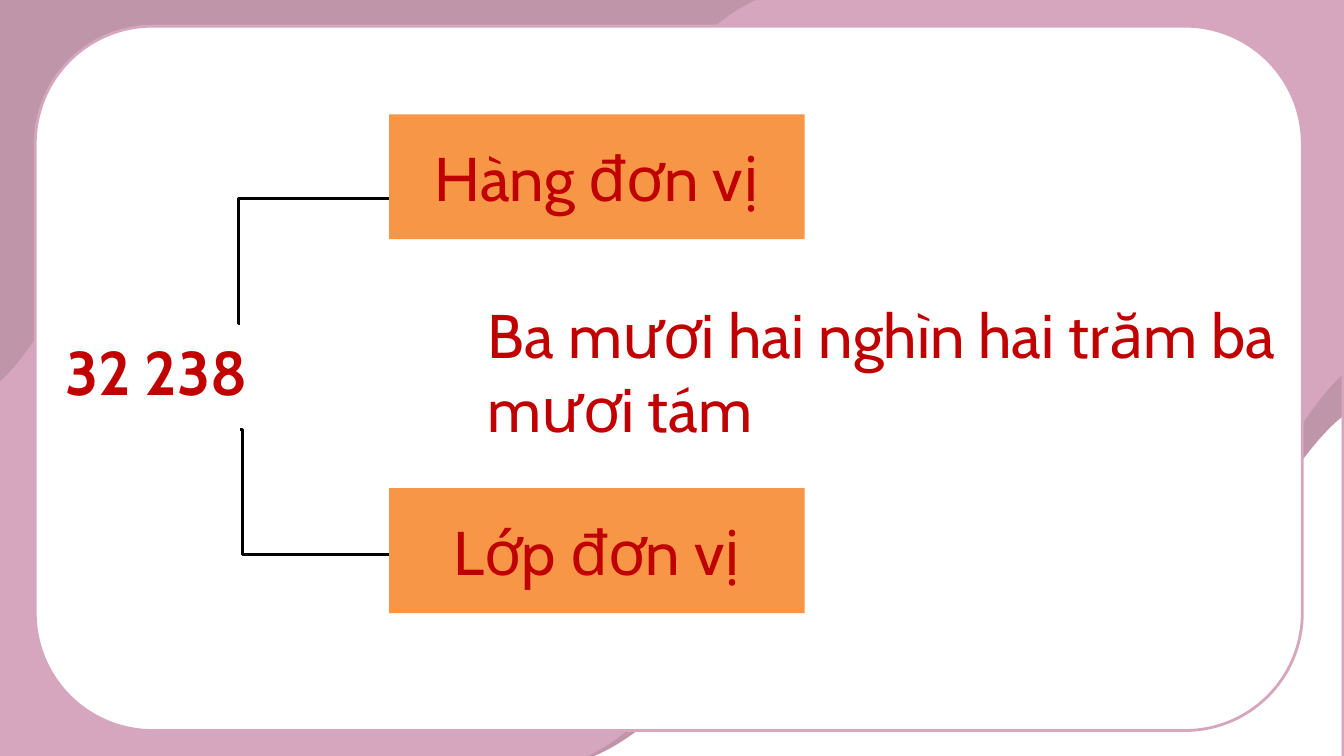
from lxml.etree import SubElement
from pptx import Presentation
from pptx.dml.color import RGBColor
from pptx.enum.shapes import MSO_CONNECTOR, MSO_SHAPE
from pptx.enum.text import MSO_ANCHOR, PP_ALIGN
from pptx.oxml.ns import qn
from pptx.util import Cm, Pt

INK = {"pink": "D5A6BD", "white": "FFFFFF", "black": "000000",
       "red": "C00000", "orange": "F79646"}


def paint(fill, name):
    fill.solid()
    fill.fore_color.rgb = RGBColor.from_string(INK[name])


def write(shape, text, align, bold=False):
    frame = shape.text_frame
    frame.word_wrap = True
    frame.vertical_anchor = MSO_ANCHOR.MIDDLE
    frame.margin_left = frame.margin_right = Cm(0.33)
    frame.margin_top = frame.margin_bottom = Cm(0.33)
    para = frame.paragraphs[0]
    para.alignment = align
    run = para.add_run()
    run.text = text
    run.font.name = "Cabin"
    run.font.size = Pt(44)
    run.font.bold = bold
    run.font.color.rgb = RGBColor.from_string(INK["red"])


deck = Presentation()
deck.slide_width = Cm(33.87)
deck.slide_height = Cm(19.05)
slide = deck.slides.add_slide(deck.slide_layouts[6])
shapes = slide.shapes
paint(slide.background.fill, "pink")

outer = [(33.81, 9.47), (32.18, 10.97), (30.99, 14.96), (28.88, 13.94),
         (26.77, 12.93), (26.04, 11.46), (23.83, 14.5),
         (21.62, 17.58), (20.9, 14.33), (19.41, 15.09),
         (17.88, 15.82), (16.59, 18.26), (14.76, 19.08)]
inner = [(33.81, 10.52), (32.18, 11.84), (31.01, 15.42), (28.93, 14.5),
         (26.85, 13.59), (26.09, 12.29), (23.9, 15.01),
         (21.72, 17.73), (21.03, 14.83), (19.53, 15.52),
         (18.03, 16.18), (16.74, 18.36), (14.91, 19.08)]
corner = (33.81, 19.08)

for knots, color, alpha, turn in [(outer, "black", 10, 0),
                                  (inner, "white", 100, 0),
                                  (outer, "black", 10, 180)]:
    dots = [(Cm(x), Cm(y)) for x, y in [*knots, corner]]
    pen = shapes.build_freeform(*dots[0])
    pen.add_line_segments(dots[1:], close=True)
    wave = pen.convert_to_shape()
    lines = list(wave._element.iter(qn("a:lnTo")))
    for k in range(0, len(knots) - 1, 3):
        curve = lines[k].makeelement(qn("a:cubicBezTo"))
        lines[k].addprevious(curve)
        for line in lines[k:k + 3]:
            curve.append(line[0])
            line.getparent().remove(line)
    if turn:
        wave.left = wave.top = Cm(0)
        wave.rotation = turn
    wave.shadow.inherit = False
    paint(wave.fill, color)
    wave.line.fill.background()
    if alpha < 100:
        tint = wave.fill._xPr.find(qn("a:solidFill"))[0]
        SubElement(tint, qn("a:alpha"), val=str(alpha * 1000))

panel = shapes.add_shape(MSO_SHAPE.ROUNDED_RECTANGLE,
                         Cm(0.89), Cm(0.66), Cm(31.93), Cm(17.75))
panel.shadow.inherit = False
paint(panel.fill, "white")
paint(panel.line.fill, "pink")
panel.line.width = Pt(2)

number = shapes.add_textbox(Cm(-1.44), Cm(8.28), Cm(10.77), Cm(2.13))
write(number, "32 238", PP_ALIGN.CENTER, True)
reading = shapes.add_textbox(Cm(11.96), Cm(5.18), Cm(20.54), Cm(8.33))
write(reading, "Ba mươi hai nghìn hai trăm ba mươi tám", PP_ALIGN.JUSTIFY)

for text, top, start, end, bend in [("Hàng đơn vị", 2.88, 5, 8.16, 100600),
                                    ("Lớp đơn vị", 12.3, 13.97, 10.82, 98300)]:
    link = shapes.add_connector(MSO_CONNECTOR.ELBOW,
                                Cm(9.81), Cm(start), Cm(6.04), Cm(end))
    paint(link.line.fill, "black")
    link.line.width = Pt(2.25)
    props = link._element.spPr
    SubElement(props, qn("a:effectLst"))
    guides = props.find(qn("a:prstGeom")).find(qn("a:avLst"))
    SubElement(guides, qn("a:gd"), name="adj1", fmla=f"val {bend}")

    box = shapes.add_shape(MSO_SHAPE.RECTANGLE, Cm(9.81), Cm(top), Cm(10.47), Cm(3.15))
    box.shadow.inherit = False
    paint(box.fill, "orange")
    box.line.fill.background()
    write(box, text, PP_ALIGN.CENTER)

deck.save("out.pptx")
